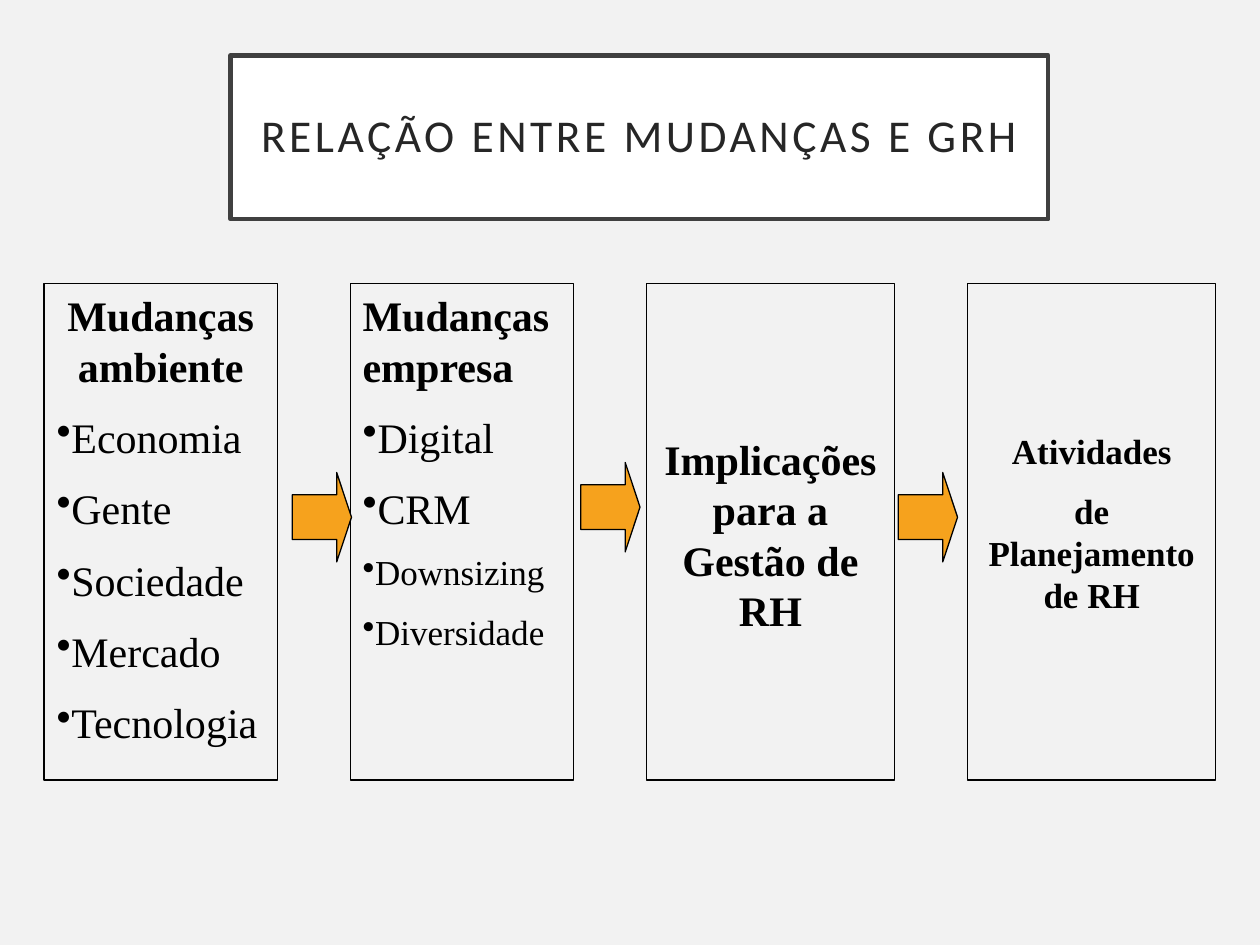
from pptx import Presentation
from pptx.dml.color import RGBColor
from pptx.enum.shapes import MSO_SHAPE
from pptx.enum.text import MSO_ANCHOR, PP_ALIGN
from pptx.util import Inches, Pt
from lxml import etree

BACKGROUND = RGBColor(0xF2, 0xF2, 0xF2)
WHITE = RGBColor(0xFF, 0xFF, 0xFF)
BLACK = RGBColor(0, 0, 0)
FRAME = RGBColor(0x40, 0x40, 0x40)
TITLE_TEXT = RGBColor(0x26, 0x26, 0x26)
ORANGE = RGBColor(0xF6, 0xA2, 0x1D)
DRAWING = "{http://schemas.openxmlformats.org/drawingml/2006/main}"


def add_box(kind, left, top, width, height, fill, line, weight):
    shape = slide.shapes.add_shape(
        kind, Inches(left), Inches(top), Inches(width), Inches(height)
    )
    shape.shadow.inherit = False
    if fill is None:
        shape.fill.background()
    else:
        shape.fill.solid()
        shape.fill.fore_color.rgb = fill
    shape.line.color.rgb = line
    shape.line.width = Pt(weight)
    return shape


def write(paragraph, text, color, font_format):
    paragraph.text = text
    for name, value in font_format.items():
        setattr(paragraph.runs[0].font, name, value)
    paragraph.runs[0].font.color.rgb = color


presentation = Presentation()
presentation.slide_width = Inches(10)
presentation.slide_height = Inches(7.5)
slide = presentation.slides.add_slide(presentation.slide_layouts[6])
slide.background.fill.solid()
slide.background.fill.fore_color.rgb = BACKGROUND

title = add_box(MSO_SHAPE.RECTANGLE, 1.83, 0.44, 6.49, 1.3, WHITE, FRAME, 2.5)
title_format = {
    "word_wrap": True,
    "vertical_anchor": MSO_ANCHOR.MIDDLE,
    "margin_left": Inches(0.2),
    "margin_right": Inches(0.2),
    "margin_top": Inches(0.2),
    "margin_bottom": Inches(0.2),
}
for name, value in title_format.items():
    setattr(title.text_frame, name, value)
paragraph = title.text_frame.paragraphs[0]
paragraph.alignment = PP_ALIGN.CENTER
paragraph.line_spacing = 0.9
write(paragraph, "RELAÇÃO ENTRE MUDANÇAS E GRH", TITLE_TEXT,
      {"name": "Calibri", "size": Pt(26)})
paragraph.runs[0].font._element.set("spc", "200")

LEFT, CENTER = PP_ALIGN.LEFT, PP_ALIGN.CENTER
columns = [
    (0.35, 1.85, 0.05, CENTER, [("Mudanças ambiente", 24)],
     [("Economia", 24), ("Gente", 24), ("Sociedade", 24),
      ("Mercado", 24), ("Tecnologia", 24)]),
    (2.78, 1.77, 0.05, LEFT, [("Mudanças empresa", 24)],
     [("Digital", 24), ("CRM", 24), ("Downsizing", 20), ("Diversidade", 20)]),
    (5.13, 1.97, 1.19, CENTER, [("Implicações para a Gestão de RH", 24)], []),
    (7.68, 1.97, 1.16, CENTER,
     [("Atividades", 20), ("de Planejamento de RH", 20)], []),
]
for left, width, margin_top, alignment, headings, items in columns:
    column = add_box(MSO_SHAPE.RECTANGLE, left, 2.25, width, 3.94, None, BLACK, 0.75)
    frame = column.text_frame
    frame.word_wrap = True
    frame.vertical_anchor = MSO_ANCHOR.TOP
    frame.margin_top = Inches(margin_top)
    for index, (text, size) in enumerate(headings + items):
        is_heading = index < len(headings)
        paragraph = frame.add_paragraph() if index else frame.paragraphs[0]
        paragraph.alignment = alignment if is_heading else LEFT
        if index:
            paragraph.space_before = Pt(size / 2)
        if not is_heading:
            properties = paragraph._p.get_or_add_pPr()
            etree.SubElement(properties, DRAWING + "buChar", char="•")
        write(paragraph, text, BLACK,
              {"name": "Times New Roman", "size": Pt(size), "bold": is_heading})

for left, top in [(2.32, 3.75), (7.13, 3.75), (4.61, 3.67)]:
    arrow = add_box(MSO_SHAPE.RIGHT_ARROW, left, top, 0.47, 0.71, ORANGE, BLACK, 0.75)
    arrow.adjustments[0] = 0.5
    arrow.adjustments[1] = 0.25

presentation.save("out.pptx")
